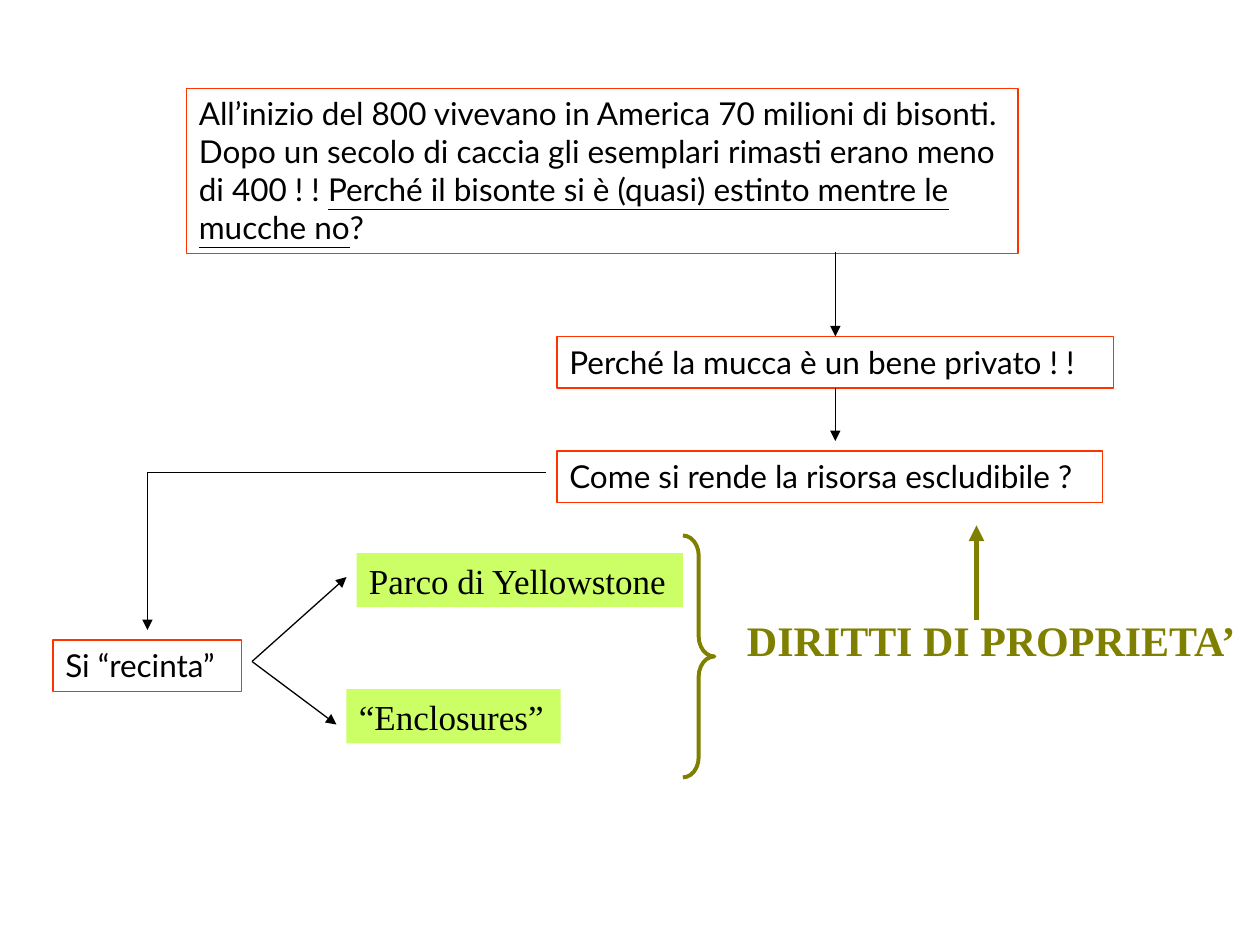
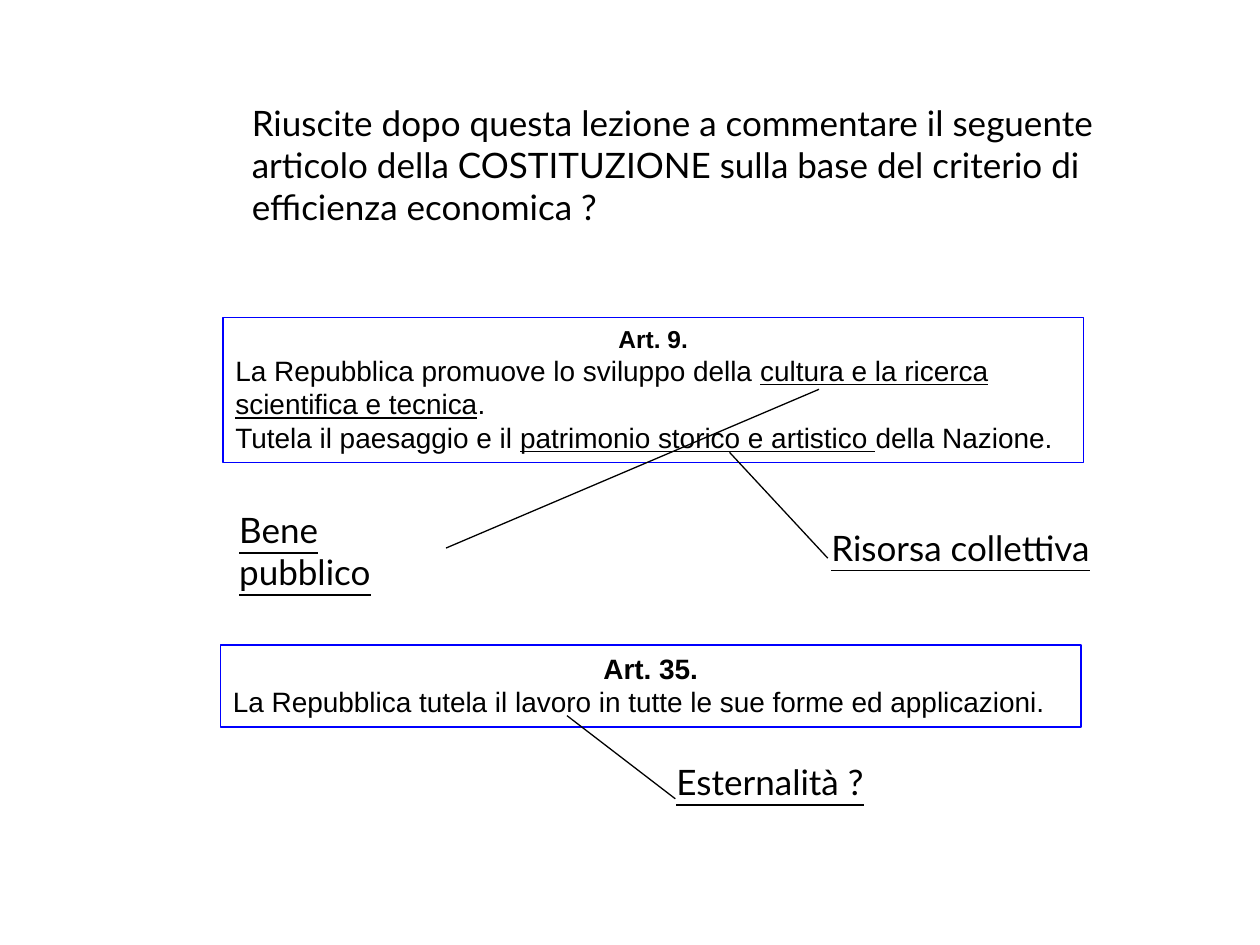
import pptx
import pptx.util
import pptx.dml.color
import pptx.enum.shapes
import pptx.enum.text
from lxml import etree

Inches, Pt = pptx.util.Inches, pptx.util.Pt
MSO = pptx.enum.shapes.MSO_SHAPE
TXT = pptx.enum.text
A = "{http://schemas.openxmlformats.org/drawingml/2006/main}"

COLORS = {"black": "000000", "red": "FF3300", "blue": "0000FF",
          "olive": "808000", "lime": "CCFF66"}

# Font formats of the text styles
BODY = {"name": "Lato", "size": Pt(18)}
QUESTION = {"name": "Lato", "size": Pt(20)}
LABEL = {**QUESTION, "underline": True}
EXAMPLE = {"name": "Times New Roman", "size": Pt(20)}
RIGHTS = {"name": "Times New Roman", "size": Pt(24), "bold": True}
ARTICLE = {"name": "Arial", "size": Pt(16)}
HEADING = {**ARTICLE, "bold": True}
SMALL_HEADING = {**HEADING, "size": Pt(14)}
UNDERLINE = {"underline": True}

# Looks of the boxes: outline, fill, wrapping, text colour
FRAME = {"line": "red"}
LAW = {"line": "blue"}
HIGHLIGHT = {"fill": "lime", "wrap": False}
PLAIN = {}
ONE_LINE = {"wrap": False}
OLIVE = {"wrap": False, "color": "olive"}

# name: (left, top, width, height), look, [(format, [run or (run, extra format)])]
BISON_BOXES = {
    "bison": ((1.48, 0.7, 6.6, 1.31), FRAME, [(BODY, [
        "All’inizio del 800 vivevano in America 70 milioni di bisonti. "
        "Dopo un secolo di caccia gli esemplari rimasti erano meno di 400 ! ! ",
        ("Perché il bisonte si è (quasi) estinto mentre le mucche no", UNDERLINE),
        "?"])]),
    "rights": ((5.83, 4.83, 4.13, 0.5), OLIVE, [(RIGHTS, ["DIRITTI DI PROPRIETA’"])]),
    "excludable": ((4.42, 3.58, 4.33, 0.41), FRAME,
                   [(BODY, ["Come si rende la risorsa escludibile ?"])]),
    "cow": ((4.42, 2.67, 4.42, 0.41), FRAME,
            [(BODY, ["Perché la mucca è un bene privato ! !"])]),
    "fence": ((0.42, 5.08, 1.5, 0.41), FRAME, [(BODY, ["Si “recinta”"])]),
    "park": ((2.83, 4.39, 2.59, 0.43), HIGHLIGHT, [(EXAMPLE, ["Parco di Yellowstone"])]),
    "enclosures": ((2.75, 5.47, 1.7, 0.43), HIGHLIGHT, [(EXAMPLE, ["“Enclosures”"])]),
}
# start, end, options
BISON_LINES = [
    ((7.75, 4.92), (7.75, 4.17), {"arrow": True, "color": "olive", "width": 3}),
    ((6.63, 2), (6.63, 2.67), {"arrow": True, "end": ("cow", 0)}),
    ((6.63, 3.08), (6.63, 3.5), {"arrow": True, "begin": ("cow", 2)}),
    ((2, 5.25), (2.75, 4.58), {"arrow": True}),
    ((2, 5.25), (2.67, 5.75), {"arrow": True}),
    ((4.33, 3.75), (1.17, 3.75), {}),
    ((1.17, 3.75), (1.17, 5), {"arrow": True}),
]
BRACE = (5.42, 4.25, 0.25, 1.92)

LAW_BOXES = {
    "question": ((1.9, 0.76, 6.89, 1.1), PLAIN, [(QUESTION, [
        "Riuscite dopo questa lezione a commentare il seguente articolo della "
        "COSTITUZIONE sulla base del criterio di efficienza economica ?"])]),
    "art9": ((1.77, 2.52, 6.83, 1.15), LAW, [
        (SMALL_HEADING, ["Art. 9."]),
        (ARTICLE, ["La Repubblica promuove lo sviluppo della ",
                   ("cultura e la ricerca scientifica e tecnica", UNDERLINE), "."]),
        (ARTICLE, ["Tutela il paesaggio e il ",
                   ("patrimonio storico e artistico ", UNDERLINE), "della Nazione."])]),
    "art35": ((1.75, 5.12, 6.83, 0.65), LAW, [
        (HEADING, ["Art. 35."]),
        (ARTICLE, ["La Repubblica tutela il lavoro in tutte le sue forme ed applicazioni."])]),
    "public": ((1.8, 3.99, 1.7, 0.77), PLAIN, [(LABEL, ["Bene pubblico"])]),
    "common": ((6.5, 4.13, 2.27, 0.44), ONE_LINE, [(LABEL, ["Risorsa collettiva"])]),
    "externality": ((5.27, 5.99, 1.72, 0.44), ONE_LINE, [(LABEL, ["Esternalità ?"])]),
}
LAW_LINES = [
    ((3.54, 4.35), (6.5, 3.09), {}),
    ((5.79, 3.59), (6.57, 4.43), {}),
    ((4.5, 5.68), (5.36, 6.34), {}),
]


def rgb(name):
    return pptx.dml.color.RGBColor.from_string(COLORS[name])


def set_line(sp, color, width=0.75):
    sp.line.color.rgb = rgb(color)
    sp.line.width = Pt(width)


def add_box(s, at, look, paragraphs):
    at = [Inches(v) for v in at]
    if "line" in look or "fill" in look:
        sp = s.shapes.add_shape(MSO.RECTANGLE, *at)
        sp.shadow.inherit = False
        sp.fill.background()
        sp.line.fill.background()
    else:
        sp = s.shapes.add_textbox(*at)
    if "fill" in look:
        sp.fill.solid()
        sp.fill.fore_color.rgb = rgb(look["fill"])
    if "line" in look:
        set_line(sp, look["line"])

    tf = sp.text_frame
    tf.word_wrap = look.get("wrap", True)
    tf.auto_size = TXT.MSO_AUTO_SIZE.SHAPE_TO_FIT_TEXT
    tf.vertical_anchor = TXT.MSO_ANCHOR.TOP
    for i, (style, runs) in enumerate(paragraphs):
        p = tf.paragraphs[0] if i == 0 else tf.add_paragraph()
        centred = style in (HEADING, SMALL_HEADING)
        p.alignment = TXT.PP_ALIGN.CENTER if centred else TXT.PP_ALIGN.LEFT
        for run in runs:
            text, extra = (run, {}) if isinstance(run, str) else run
            r = p.add_run()
            r.text = text
            r.font.color.rgb = rgb(look.get("color", "black"))
            for key, value in {**style, **extra}.items():
                setattr(r.font, key, value)
    return sp


def add_line(s, boxes, start, end, options):
    ends = [Inches(v) for v in start + end]
    cx = s.shapes.add_connector(pptx.enum.shapes.MSO_CONNECTOR.STRAIGHT, *ends)
    set_line(cx, options.get("color", "black"), options.get("width", 0.75))
    if options.get("arrow"):
        etree.SubElement(cx.line._get_or_add_ln(), A + "tailEnd", type="triangle")
    etree.SubElement(cx._element.spPr, A + "effectLst")
    if "begin" in options:
        name, side = options["begin"]
        cx.begin_connect(boxes[name], side)
    if "end" in options:
        name, side = options["end"]
        cx.end_connect(boxes[name], side)


def add_brace(s):
    sp = s.shapes.add_shape(MSO.RIGHT_BRACE, *[Inches(v) for v in BRACE])
    sp.shadow.inherit = False
    sp.fill.background()
    sp.adjustments[0] = 0.64
    set_line(sp, "olive", 2.25)


def add_slide(prs, boxes, lines):
    s = prs.slides.add_slide(prs.slide_layouts[6])
    placed = {name: add_box(s, *box) for name, box in boxes.items()}
    for line in lines:
        add_line(s, placed, *line)
    return s


def main():
    prs = pptx.Presentation()
    prs.slide_width, prs.slide_height = Inches(10), Inches(7.5)
    add_brace(add_slide(prs, BISON_BOXES, BISON_LINES))
    add_slide(prs, LAW_BOXES, LAW_LINES)
    prs.save("out.pptx")


if __name__ == "__main__":
    main()
